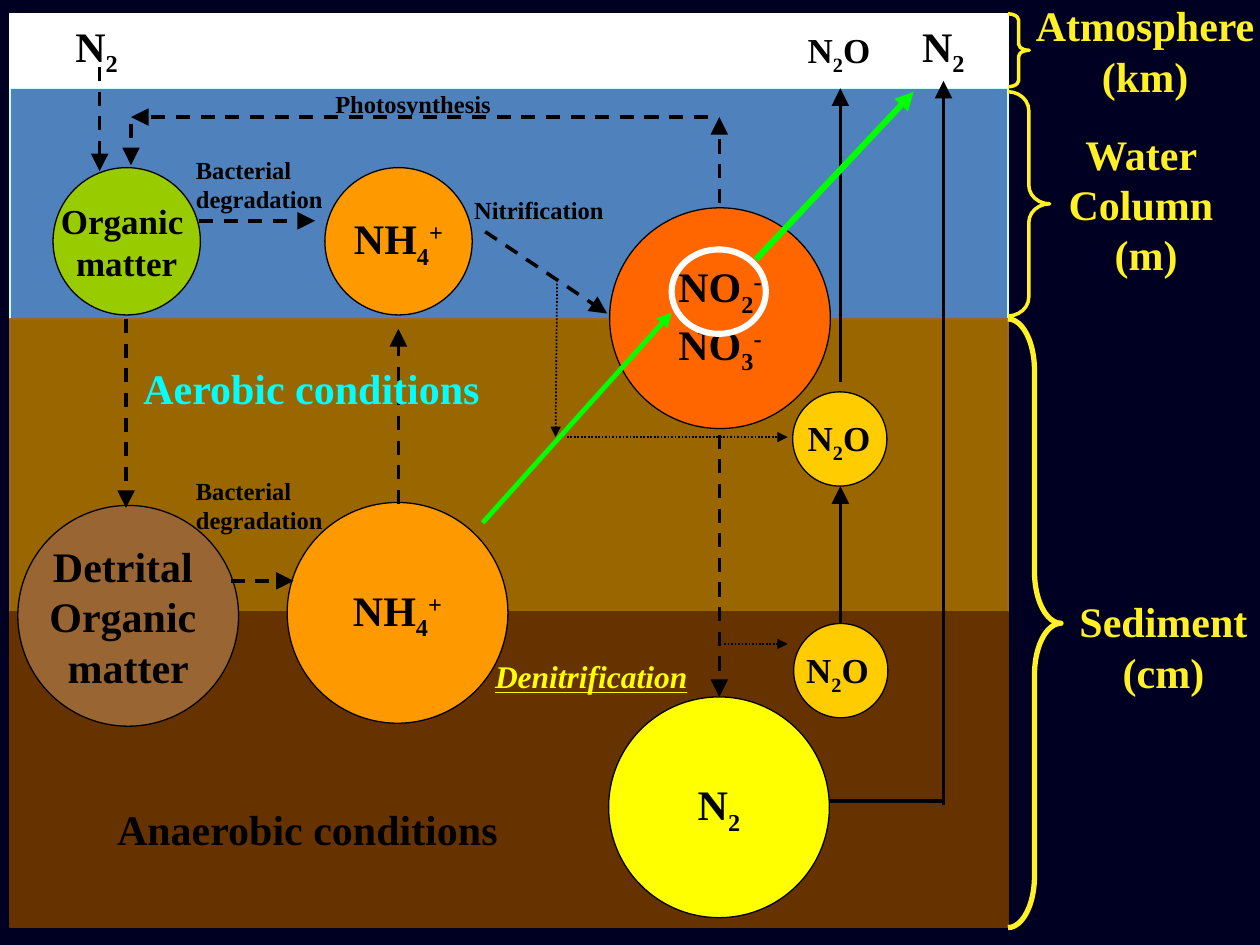
"""Build a slide of the nitrogen cycle across air, water and sediment."""
import pptx
import pptx.dml.color
import pptx.enum.dml
import pptx.enum.shapes
import pptx.enum.text
import pptx.oxml
import pptx.oxml.ns
import pptx.util

Cm, Pt = pptx.util.Cm, pptx.util.Pt
Rgb = pptx.dml.color.RGBColor.from_string
Kind = pptx.enum.shapes.MSO_SHAPE
Dash = pptx.enum.dml.MSO_LINE
Text = pptx.enum.text
Left, Mid = Text.PP_ALIGN.LEFT, Text.PP_ALIGN.CENTER


class Theme:
    font = "Times New Roman"
    night, black, white = "000022", "000000", "FFFFFF"
    water, foam = "4F81BD", "CCFFFF"
    mud, earth, clay = "996600", "663300", "996633"
    leaf, amber, orange, gold = "99CC00", "FF9900", "FF6600", "FFCC00"
    yellow, lemon, cyan, green = "FFFF00", "FFF123", "00FFFF", "00FF00"
    big, mid, small, note = 24, 20, 18, 14


def write(frame, lines, size, color=Theme.black, align=Mid):
    """Write lines whose parts, split by |, drop after _ and rise after ^."""
    frame.word_wrap = False
    for i, line in enumerate(lines):
        para = frame.add_paragraph() if i else frame.paragraphs[0]
        para.alignment = align
        font = para.font
        font.name, font.size, font.bold = Theme.font, Pt(size), True
        font.color.rgb = Rgb(color)
        for part in line.split("|"):
            run = para.add_run()
            run.text = part.lstrip("_^")
            if part[0] in "_^":
                base = "-25000" if part[0] == "_" else "30000"
                run._r.get_or_add_rPr().set("baseline", base)


def draw(kind, box, fill, line, width=0.75):
    """Add a preset shape, hollow when fill is None."""
    shape = slide.shapes.add_shape(kind, *map(Cm, box))
    shape.shadow.inherit = False
    if fill:
        shape.fill.solid()
        shape.fill.fore_color.rgb = Rgb(fill)
    else:
        shape.fill.background()
    shape.line.color.rgb = Rgb(line)
    shape.line.width = Pt(width)
    return shape


deck = pptx.Presentation()
deck.slide_width, deck.slide_height = Cm(25.4), Cm(19.05)
slide = deck.slides.add_slide(deck.slide_layouts[6])
slide.background.fill.solid()
slide.background.fill.fore_color.rgb = Rgb(Theme.night)

for top, high, fill, line in [
    (0.28, 3.61, Theme.white, Theme.white),
    (1.78, 4.65, Theme.water, Theme.foam),
    (6.43, 6.35, Theme.mud, Theme.clay),
    (12.34, 6.35, Theme.earth, Theme.earth),
]:
    draw(Kind.RECTANGLE, (0.2, top, 20.12, high), fill, line)

wide, slim, tiny = 4.45, 2.97, 1.9
for x, y, size, fill, lines, type_size in [
    (0.36, 10.19, wide, Theme.clay, ["Detrital ", "Organic ", "matter"], Theme.big),
    (1.07, 3.38, slim, Theme.leaf, ["Organic ", "matter"], Theme.mid),
    (6.55, 3.38, slim, Theme.amber, ["NH|_4|^+"], Theme.big),
    (5.79, 10.13, wide, Theme.amber, ["NH|_4|^+"], Theme.big),
    (12.29, 4.19, wide, Theme.orange, ["NO|_2|^-", "NO|_3|^-"], Theme.big),
    (12.27, 14.05, wide, Theme.yellow, ["N|_2"], Theme.big),
    (15.98, 7.9, tiny, Theme.gold, [], Theme.mid),
    (16, 12.57, tiny, Theme.gold, [], Theme.mid),
]:
    ball = draw(Kind.OVAL, (x, y, size, size), fill, Theme.black)
    ball.text_frame.vertical_anchor = Text.MSO_ANCHOR.MIDDLE
    write(ball.text_frame, lines, type_size)
draw(Kind.OVAL, (13.54, 5.03, 1.9, 1.7), None, Theme.white, 3.5)

for top, wide, high, bend, width in [
    (6.43, 1.07, 12.27, 0.97, 3),
    (0.28, 0.43, 1.47, 0.29, 2),
    (1.85, 0.84, 4.52, 0.45, 2),
]:
    brace = draw(Kind.RIGHT_BRACE, (20.32, top, wide, high), None, Theme.lemon, width)
    brace.adjustments[0] = bend
    brace.adjustments[1] = 0.5

dash = (Theme.black, 2, Dash.DASH, "lg")
dot = (Theme.black, 1, Dash.ROUND_DOT, "med")
full = (Theme.black, 2, None, "lg")
for ends, (color, width, style, head) in [
    ((4.65, 11.71, 5.92, 11.71), dash),
    ((8.03, 10.16, 8.03, 6.63), dash),
    ((14.5, 8.76, 14.5, 14.05), dash),
    ((2.01, 1.35, 2.01, 3.45), dash),
    ((14.5, 4.09, 14.5, 2.36), dash),
    ((14.27, 2.36, 2.64, 2.36), dash),
    ((2.64, 2.49, 2.64, 3.33), dash),
    ((2.54, 6.43, 2.54, 10.24), dash),
    ((9.78, 4.67, 12.24, 6.32), dash),
    ((4.01, 4.45, 6.35, 4.45), dash),
    ((14.6, 12.98, 15.88, 12.98), dot),
    ((11.23, 5.72, 11.2, 8.81), dot),
    ((11.43, 8.81, 15.88, 8.81), dot),
    ((16.94, 12.57, 16.94, 9.8), full),
    ((16.94, 7.7, 16.94, 1.78), full),
    ((19.02, 16.23, 19.02, 1.63), full),
    ((16.71, 16.15, 19.05, 16.15), (Theme.black, 2, None, None)),
    ((9.73, 10.54, 13.54, 6.3), (Theme.green, 2.75, None, "med")),
    ((15.24, 5.23, 18.42, 1.85), (Theme.green, 3.5, None, "med")),
]:
    link = slide.shapes.add_connector(
        pptx.enum.shapes.MSO_CONNECTOR.STRAIGHT, *map(Cm, ends))
    link.line.color.rgb = Rgb(color)
    link.line.width = Pt(width)
    if style:
        link.line.dash_style = style
    if head:
        tail = pptx.oxml.parse_xml(
            f'<a:tailEnd {pptx.oxml.ns.nsdecls("a")} type="triangle"'
            f' w="{head}" len="{head}"/>')
        link.line._get_or_add_ln().append(tail)
    link._element.spPr.append(
        pptx.oxml.parse_xml(f'<a:effectLst {pptx.oxml.ns.nsdecls("a")}/>'))

gas, rot = ["N|_2|O"], ["Bacterial", "degradation"]
for box, lines, size, color, align in [
    ((16.03, 8.28, 1.8, 1.09), gas, Theme.mid, Theme.black, Left),
    ((16, 12.95, 1.8, 1.09), gas, Theme.mid, Theme.black, Left),
    ((16.03, 0.46, 1.8, 1.09), gas, Theme.mid, Theme.black, Left),
    ((18.34, 0.28, 1.4, 1.27), ["N|_2"], Theme.big, Theme.black, Left),
    ((1.27, 0.28, 1.4, 1.27), ["N|_2"], Theme.big, Theme.black, Left),
    ((6.51, 1.68, 3.75, 0.84), ["Photosynthesis"], Theme.note, Theme.black, Left),
    ((3.7, 3, 3.2, 1.45), rot, Theme.note, Theme.black, Left),
    ((3.7, 9.47, 3.2, 1.45), rot, Theme.note, Theme.black, Left),
    ((9.31, 3.81, 3.2, 0.84), ["Nitrification"], Theme.note, Theme.black, Left),
    ((20.62, -0.13, 4.93, 2.29), ["Atmosphere", "(km)"], Theme.big, Theme.lemon, Mid),
    ((21.29, 2.46, 3.63, 3.3), ["Water ", "Column ", "(m)"], Theme.big, Theme.lemon, Mid),
    ((21.51, 11.89, 3.89, 2.29), ["Sediment", "(cm)"], Theme.big, Theme.lemon, Mid),
    ((2.64, 7.19, 7.32, 1.27), ["Aerobic conditions"], Theme.big, Theme.cyan, Left),
    ((2.11, 16.08, 8.2, 1.27), ["Anaerobic conditions"], Theme.big, Theme.black, Left),
    ((9.73, 13.13, 4.39, 1.02), ["Denitrification"], Theme.small, Theme.yellow, Left),
]:
    label = slide.shapes.add_textbox(*map(Cm, box)).text_frame
    write(label, lines, size, color, align)
    label.auto_size = Text.MSO_AUTO_SIZE.SHAPE_TO_FIT_TEXT
label.paragraphs[0].font.italic = True
label.paragraphs[0].font.underline = True

deck.save("out.pptx")
